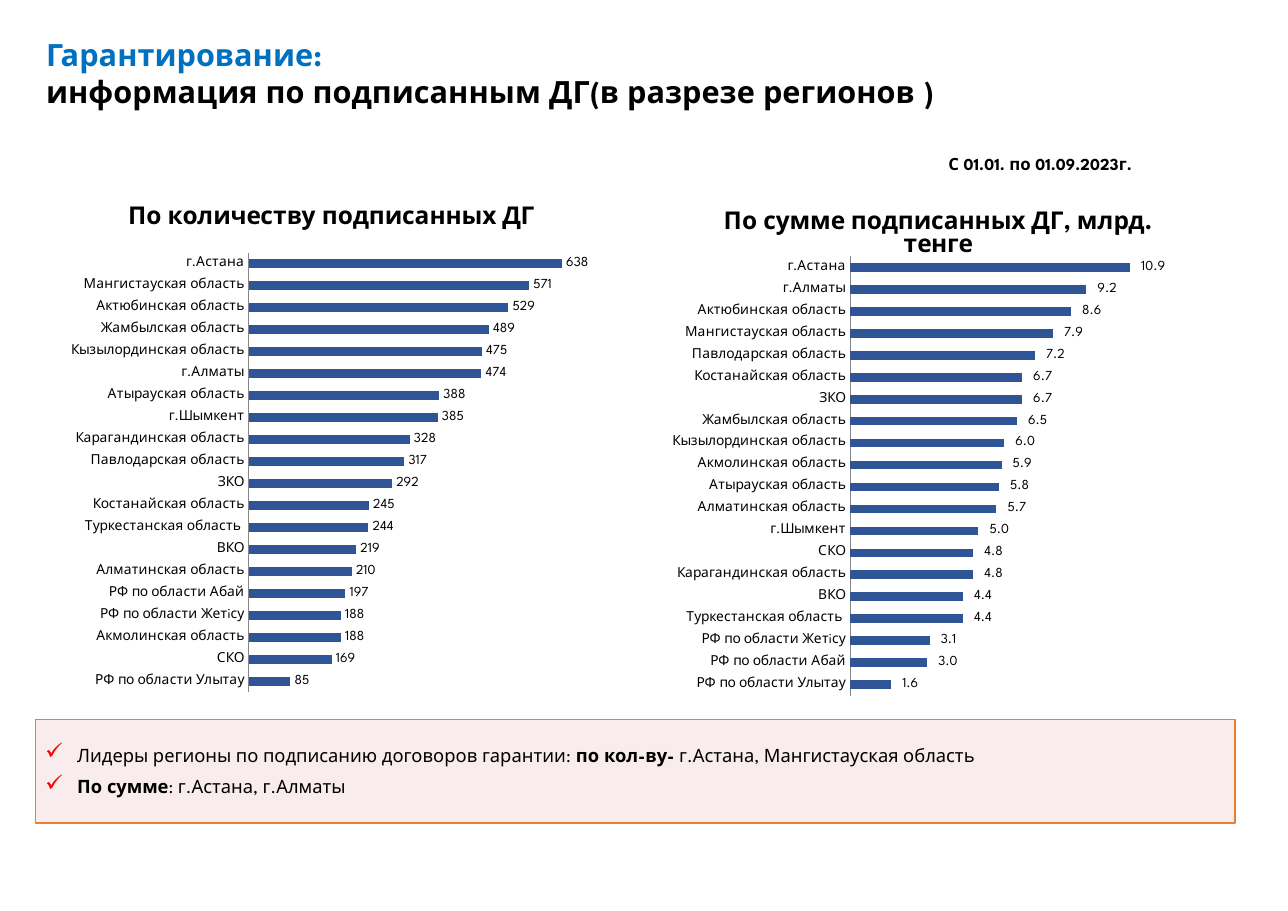
import pptx
import pptx.chart.data
import pptx.dml.color
import pptx.enum.chart
import pptx.enum.shapes
import pptx.enum.text
import pptx.oxml
import pptx.oxml.ns
import pptx.util
from pptx.util import Inches, Pt

COLORS = {
    "heading": "0070C0",
    "text": "000000",
    "bar": "2F5597",
    "axis": "868686",
    "note_fill": "F2DCDB",
    "note_line": "ED7D31",
    "check": "FF0000",
}
FONT = "League Spartan"
CHART_FONT = "Calibri"
AMOUNT_FORMAT = r"_-* #\ ##0.0_р_._-;\-* #\ ##0.0_р_._-"

COUNTS = [
    ("РФ по области Улытау", 85), ("СКО", 169), ("Акмолинская область", 188),
    ("РФ по области Жетiсу", 188), ("РФ по области Абай", 197),
    ("Алматинская область", 210), ("ВКО", 219), ("Туркестанская область ", 244),
    ("Костанайская область", 245), ("ЗКО", 292), ("Павлодарская область", 317),
    ("Карагандинская область", 328), ("г.Шымкент", 385), ("Атырауская область", 388),
    ("г.Алматы", 474), ("Кызылординская область", 475), ("Жамбылская область", 489),
    ("Актюбинская область", 529), ("Мангистауская область", 571), ("г.Астана", 638),
]
AMOUNTS = [
    ("РФ по области Улытау", 1.6), ("РФ по области Абай", 3.0),
    ("РФ по области Жетiсу", 3.1), ("Туркестанская область ", 4.4), ("ВКО", 4.4),
    ("Карагандинская область", 4.8), ("СКО", 4.8), ("г.Шымкент", 5.0),
    ("Алматинская область", 5.7), ("Атырауская область", 5.8),
    ("Акмолинская область", 5.9), ("Кызылординская область", 6.0),
    ("Жамбылская область", 6.5), ("ЗКО", 6.7), ("Костанайская область", 6.7),
    ("Павлодарская область", 7.2), ("Мангистауская область", 7.9),
    ("Актюбинская область", 8.6), ("г.Алматы", 9.2), ("г.Астана", 10.9),
]


def rgb(name):
    return pptx.dml.color.RGBColor.from_string(COLORS[name])


def style_font(font, size, color="text", bold=None, name=FONT):
    font.name = name
    font.size = Pt(size)
    font.bold = bold
    font.color.rgb = rgb(color)


def xml(text):
    prefix = text[1:text.index(":")]
    declaration = pptx.oxml.ns.nsdecls(prefix)
    end = min(i for i in (text.find(" "), text.find("/"), text.find(">")) if i > 0)
    return pptx.oxml.parse_xml(f"{text[:end]} {declaration}{text[end:]}")


class RegionSlide:
    def __init__(self, presentation):
        self.slide = presentation.slides.add_slide(presentation.slide_layouts[6])

    def text_box(self, box, wrap):
        frame = self.slide.shapes.add_textbox(*map(Inches, box)).text_frame
        frame.word_wrap = wrap
        return frame.paragraphs[0]

    def heading(self, box, topic, subject):
        paragraph = self.text_box(box, True)
        style_font(paragraph.font, 20, bold=True)
        topic_run = paragraph.add_run()
        topic_run.text = topic
        topic_run.font.color.rgb = rgb("heading")
        paragraph.add_line_break()
        paragraph.add_run().text = subject

    def period(self, box, text):
        paragraph = self.text_box(box, False)
        paragraph.text = text
        style_font(paragraph.font, 11, bold=True)

    def checklist(self, box, items):
        panel = self.slide.shapes.add_shape(
            pptx.enum.shapes.MSO_SHAPE.RECTANGLE, *map(Inches, box))
        panel.shadow.inherit = False
        panel.fill.solid()
        panel.fill.fore_color.rgb = rgb("note_fill")
        tint = next(panel.fill._xPr.iter(pptx.oxml.ns.qn("a:srgbClr")))
        tint.append(xml('<a:alpha val="50000"/>'))
        panel.line.color.rgb = rgb("note_line")
        panel.line.width = Pt(1)
        frame = panel.text_frame
        frame.word_wrap = True
        frame.vertical_anchor = pptx.enum.text.MSO_ANCHOR.MIDDLE
        frame.margin_left = frame.margin_right = Inches(0.08)
        frame.margin_top = frame.margin_bottom = Inches(0.04)
        for index, runs in enumerate(items):
            paragraph = frame.add_paragraph() if index else frame.paragraphs[0]
            paragraph.alignment = pptx.enum.text.PP_ALIGN.LEFT
            paragraph.space_after = Pt(6)
            properties = paragraph._p.get_or_add_pPr()
            properties.set("marL", str(Inches(0.3)))
            properties.set("indent", str(Inches(-0.29)))
            properties.append(xml(
                f'<a:buClr><a:srgbClr val="{COLORS["check"]}"/></a:buClr>'))
            properties.append(xml('<a:buSzPct val="125000"/>'))
            properties.append(xml('<a:buChar char="✓"/>'))
            style_font(paragraph.font, 12)
            for text, bold in runs:
                run = paragraph.add_run()
                run.text = text
                run.font.bold = bold

    def region_chart(self, box, title, regions, plot_area, maximum, number_format):
        data = pptx.chart.data.CategoryChartData(number_format=number_format)
        data.categories = [region for region, _ in regions]
        data.add_series("Series 1", [value for _, value in regions])
        chart = self.slide.shapes.add_chart(
            pptx.enum.chart.XL_CHART_TYPE.BAR_CLUSTERED, *map(Inches, box), data).chart
        style_font(chart.font, 10, name=CHART_FONT)
        chart.has_legend = False
        chart.has_title = True
        heading = chart.chart_title.text_frame.paragraphs[0]
        heading.text = title
        style_font(heading.font, 16, bold=True)

        region_axis = chart.category_axis
        region_axis.major_tick_mark = pptx.enum.chart.XL_TICK_MARK.NONE
        region_axis.has_major_gridlines = False
        region_axis.format.line.color.rgb = rgb("axis")
        region_axis.format.line.width = Pt(0.75)
        style_font(region_axis.tick_labels.font, 9)
        chart.value_axis.visible = False
        chart.value_axis.has_major_gridlines = False
        chart.value_axis.minimum_scale = 0
        chart.value_axis.maximum_scale = maximum

        plot = chart.plots[0]
        plot.gap_width = 150
        plot.vary_by_categories = False
        bars = plot.series[0].format.fill
        bars.solid()
        bars.fore_color.rgb = rgb("bar")
        plot.has_data_labels = True
        labels = plot.data_labels
        labels.show_value = True
        labels.position = pptx.enum.chart.XL_LABEL_POSITION.OUTSIDE_END
        labels.number_format = number_format
        labels.number_format_is_linked = False
        style_font(labels.font, 9)
        self.place_plot(chart, plot_area)

    def place_plot(self, chart, plot_area):
        area = chart._chartSpace.chart.plotArea
        for layout in area.findall(pptx.oxml.ns.qn("c:layout")):
            area.remove(layout)
        modes = '<c:xMode val="edge"/><c:yMode val="edge"/>'
        sizes = "".join(f'<c:{tag} val="{value}"/>' for tag, value in zip("xywh", plot_area))
        area.insert(0, xml('<c:layout><c:manualLayout><c:layoutTarget val="inner"/>'
                           f"{modes}{sizes}</c:manualLayout></c:layout>"))


def main():
    presentation = pptx.Presentation()
    presentation.slide_width = Inches(11.69)
    presentation.slide_height = Inches(8.27)
    page = RegionSlide(presentation)
    page.heading((0.32, 0.28, 8.3, 0.77), "Гарантирование: ",
                 "информация по подписанным ДГ(в разрезе регионов )")
    page.period((8.51, 1.35, 1.96, 0.29), "С 01.01. по 01.09.2023г.")
    page.checklist((0.32, 6.53, 10.89, 0.94), [
        [("Лидеры регионы по подписанию договоров гарантии: ", False),
         ("по кол-ву- ", True), ("г.Астана, Мангистауская область", False)],
        [("По сумме", True), (": г.Астана, г.Алматы", False)],
    ])
    page.region_chart((0.32, 1.67, 5.38, 4.81), "По количеству подписанных ДГ",
                      COUNTS, (0.36, 0.13, 0.58, 0.83), 700, "General")
    page.region_chart((5.66, 1.71, 5.71, 4.75), "По сумме подписанных ДГ, млрд. тенге",
                      AMOUNTS, (0.36, 0.13, 0.49, 0.84), 12, AMOUNT_FORMAT)
    presentation.save("out.pptx")


if __name__ == "__main__":
    main()
